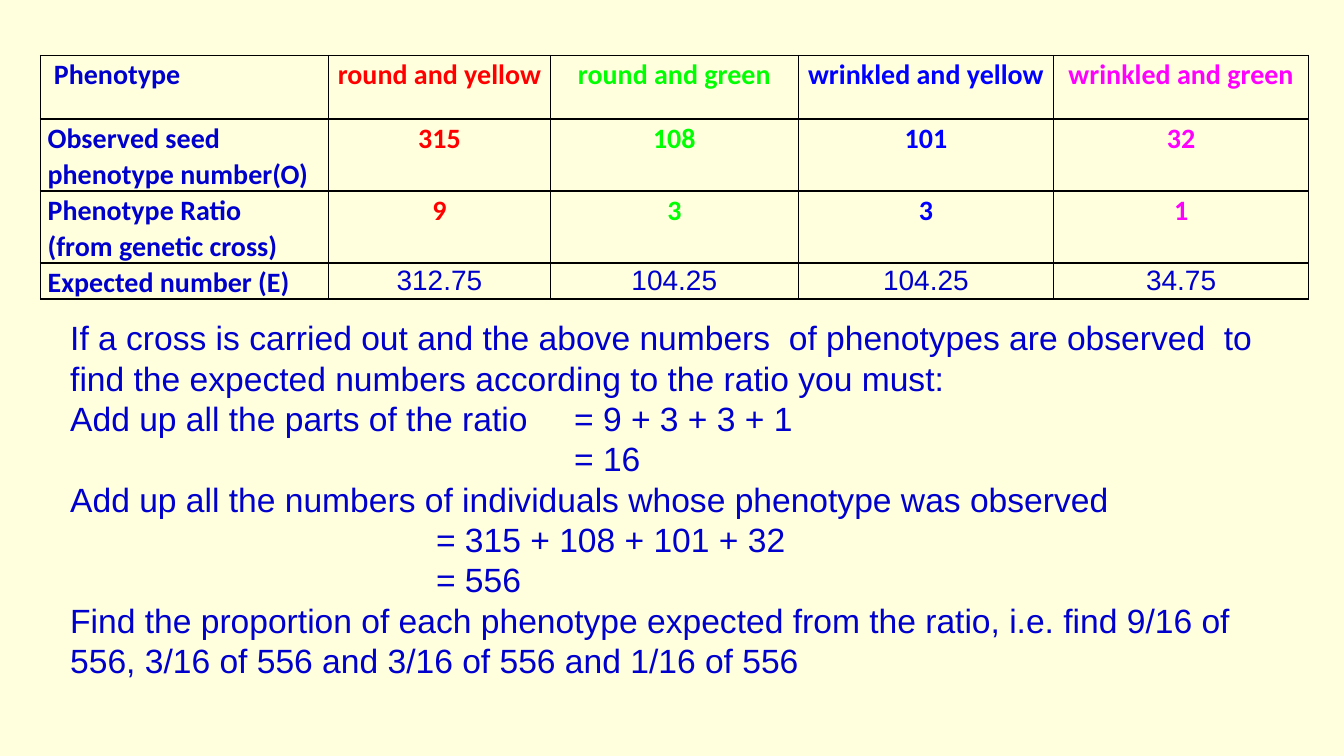
from dataclasses import dataclass

from lxml import etree
from pptx import Presentation
from pptx.dml.color import RGBColor
from pptx.enum import text
from pptx.oxml import ns
from pptx.util import Cm, Pt

ROW_LABELS = [
    ["\N{NO-BREAK SPACE}Phenotype".replace("\N{NO-BREAK SPACE}", " ")],
    ["Observed seed phenotype number(O)"],
    ["Phenotype Ratio", "(from genetic cross)"],
    ["Expected number (E)"],
]
# name, observed, ratio, expected
PHENOTYPES = [
    ("round and yellow", "315", "9", "312.75"),
    ("round and green", "108", "3", "104.25"),
    ("wrinkled and yellow", "101", "3", "104.25"),
    ("wrinkled and green", "32", "1", "34.75"),
]
RATIO_TAB, TOTAL_TAB = Cm(12.7), Cm(9.22)
# line, tab stop
METHOD = [
    ("If a cross is carried out and the above numbers  of phenotypes are observed  to "
     "find the expected numbers according to the ratio you must:", None),
    ("Add up all the parts of the ratio \t= 9 + 3 + 3 + 1", RATIO_TAB),
    ("\t= 16", RATIO_TAB),
    ("Add up all the numbers of individuals whose phenotype was observed", None),
    ("\t= 315 + 108 + 101 + 32", TOTAL_TAB),
    ("\t= 556", TOTAL_TAB),
    ("Find the proportion of each phenotype expected from the ratio, i.e. find 9/16 of "
     "556, 3/16 of 556 and 3/16 of 556 and 1/16 of 556", None),
]
COLUMN_WIDTHS = [Cm(7.26), Cm(5.59), Cm(6.25), Cm(6.43), Cm(6.43)]
ROW_HEIGHTS = [Cm(1.6), Cm(1.6), Cm(1.6), Cm(0.79)]


@dataclass(frozen=True)
class Theme:
    background: str = "FFFFDE"
    ink: str = "0000CC"
    border: str = "000000"
    phenotypes: tuple = ("FF0000", "00FF00", "0000FF", "FF00FF")
    heading_font: str = "Calibri"
    body_font: str = "Arial"
    table_size: int = 20
    body_size: int = 24


THEME = Theme()


def add_run(paragraph, words, font, size, colour, bold=False):
    run = paragraph.add_run()
    run.text = words
    run.font.name, run.font.size, run.font.bold = font, Pt(size), bold
    run.font.color.rgb = RGBColor.from_string(colour)


def add_tab_stop(paragraph, position):
    tabs = etree.SubElement(paragraph._p.get_or_add_pPr(), ns.qn("a:tabLst"))
    etree.SubElement(tabs, ns.qn("a:tab"), pos=str(int(position)), algn="l")


def add_borders(cell):
    properties = cell._tc.get_or_add_tcPr()
    for side in ("lnL", "lnR", "lnT", "lnB"):
        line = etree.SubElement(properties, ns.qn(f"a:{side}"), w=str(int(Pt(1))))
        fill = etree.SubElement(line, ns.qn("a:solidFill"))
        etree.SubElement(fill, ns.qn("a:srgbClr"), val=THEME.border)


def fill_cell(cell, lines, font, colour, bold, centred, space_after):
    add_borders(cell)
    cell.fill.background()
    cell.margin_left = cell.margin_right = Cm(0.18)
    cell.margin_top = cell.margin_bottom = 0
    frame = cell.text_frame
    for i, line in enumerate(lines):
        paragraph = frame.add_paragraph() if i else frame.paragraphs[0]
        paragraph.alignment = text.PP_ALIGN.CENTER if centred else text.PP_ALIGN.LEFT
        paragraph.line_spacing = 1.07
        paragraph.space_after = Pt(space_after)
        add_run(paragraph, line, font, THEME.table_size, colour, bold)


def add_phenotype_table(slide):
    table = slide.shapes.add_table(
        len(ROW_LABELS), len(COLUMN_WIDTHS), Cm(1.02), Cm(1.4),
        sum(COLUMN_WIDTHS), sum(ROW_HEIGHTS)).table
    table.first_row = table.horz_banding = False
    for column, width in zip(table.columns, COLUMN_WIDTHS):
        column.width = width
    for row, height in zip(table.rows, ROW_HEIGHTS):
        row.height = height
    expected_row = len(ROW_LABELS) - 1
    for r, label in enumerate(ROW_LABELS):
        fill_cell(table.cell(r, 0), label, THEME.heading_font, THEME.ink,
                  bold=True, centred=False, space_after=8 if r == 1 else 0)
        for c, phenotype in enumerate(PHENOTYPES):
            expected = r == expected_row
            fill_cell(table.cell(r, c + 1), [phenotype[r]],
                      THEME.body_font if expected else THEME.heading_font,
                      THEME.ink if expected else THEME.phenotypes[c],
                      bold=not expected, centred=True, space_after=8 if r else 0)


def add_method(slide):
    frame = slide.shapes.add_textbox(Cm(1.52), Cm(7.87), Cm(31.45), Cm(9.5)).text_frame
    frame.word_wrap = True
    frame.auto_size = text.MSO_AUTO_SIZE.SHAPE_TO_FIT_TEXT
    for i, (line, tab_stop) in enumerate(METHOD):
        paragraph = frame.add_paragraph() if i else frame.paragraphs[0]
        if tab_stop:
            add_tab_stop(paragraph, tab_stop)
        add_run(paragraph, line, THEME.body_font, THEME.body_size, THEME.ink)


def main():
    deck = Presentation()
    deck.slide_width, deck.slide_height = Cm(33.87), Cm(19.05)
    slide = deck.slides.add_slide(deck.slide_layouts[6])
    slide.background.fill.solid()
    slide.background.fill.fore_color.rgb = RGBColor.from_string(THEME.background)
    add_method(slide)
    add_phenotype_table(slide)
    deck.save("out.pptx")


if __name__ == "__main__":
    main()
